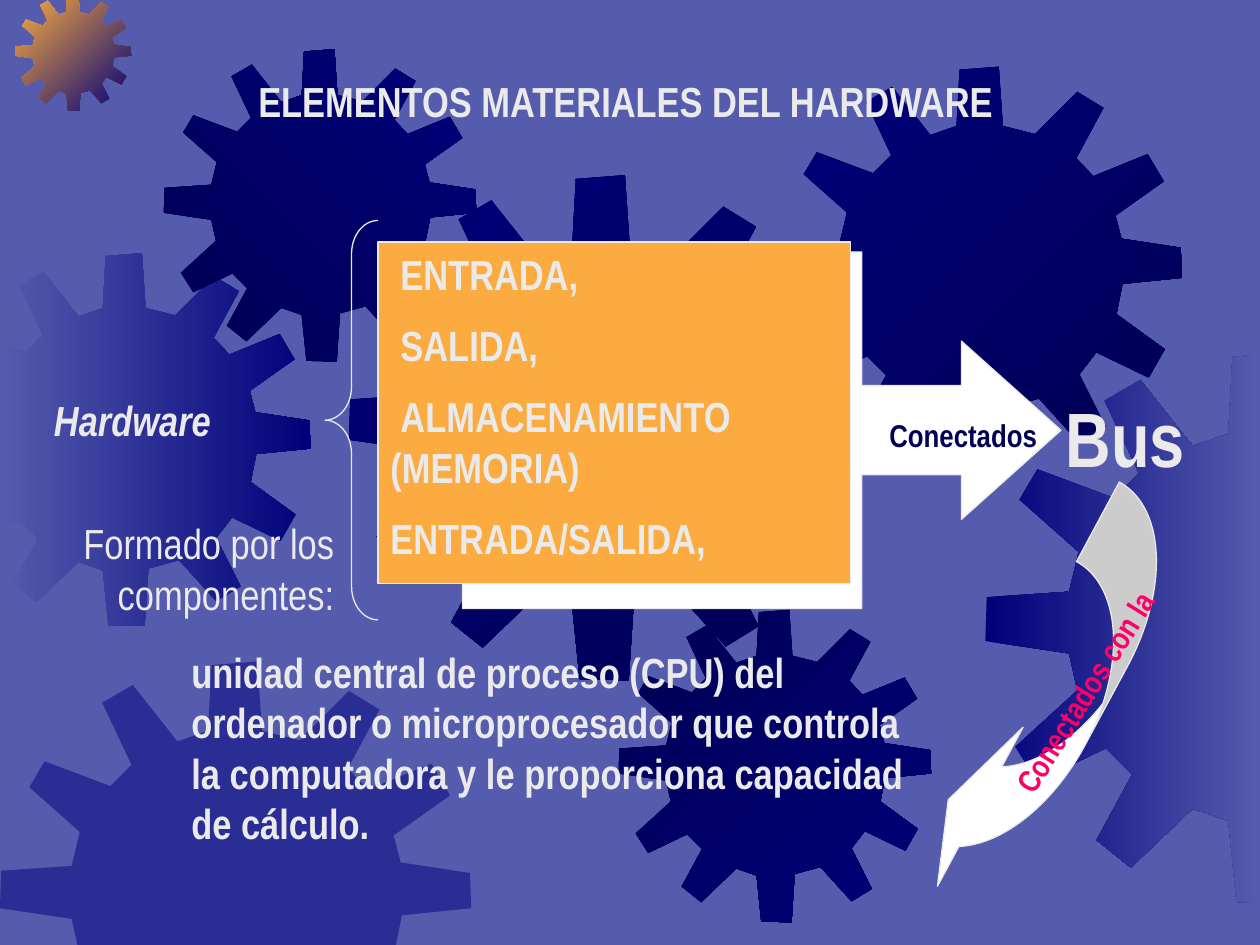
from lxml.etree import SubElement
from pptx import Presentation
from pptx.dml.color import RGBColor
from pptx.enum.shapes import MSO_SHAPE as SHAPE
from pptx.enum.text import MSO_ANCHOR, MSO_AUTO_SIZE, PP_ALIGN
from pptx.oxml.ns import qn
from pptx.util import Inches, Pt

W, H = 10, 7.5
FONT = "Arial Narrow"
PERIWINKLE, BLUE, NAVY = "555BAD", "00007A", "000054"
ORANGE, PALE, WHITE, PINK = "FCAB40", "EAEAEA", "FFFFFF", "FF0066"

# Outline of a twelve-tooth gear on a square grid of GEAR_GRID units
GEAR_GRID = 401
GEAR = [
    (255, 67), (223, 59), (219, 0), (180, 3), (177, 59), (151, 68), (113, 20), (87, 35),
    (112, 88), (94, 106), (38, 85), (25, 107), (68, 145), (61, 174), (1, 178), (0, 210),
    (61, 219), (67, 246), (22, 287), (38, 312), (88, 288), (107, 307), (81, 355), (106, 375),
    (151, 332), (177, 341), (183, 400), (222, 401), (226, 339), (259, 330), (299, 374), (325, 358),
    (299, 306), (316, 284), (368, 309), (384, 281), (336, 246), (342, 216), (401, 210), (400, 180),
    (341, 171), (335, 148), (383, 114), (367, 87), (313, 109), (296, 91), (323, 41), (297, 25),
]

# left, top, size, first colour, last colour, clockwise gradient angle
GEARS = [
    (-0.49, 2.01, 2.96, PERIWINKLE, BLUE, 0),
    (0.12, -0.04, 0.92, ORANGE, BLUE, 45),
    (1.3, 0.39, 2.48, NAVY, BLUE, 315),
    (2.77, 1.39, 4.01, BLUE, NAVY, 45),
    (0, 5.25, 3.74, BLUE, None, None),  # half transparent
    (4.91, 4.84, 2.48, NAVY, BLUE, 45),
    (6.18, 0.53, 3.2, BLUE, NAVY, 45),
    (7.82, 2.8, 4.37, BLUE, PERIWINKLE, 0),
]

# preset, box, adjustments, fill, rotation
DIAGRAM = {
    "brace": (SHAPE.LEFT_BRACE, (2.58, 1.75, 0.42, 3.17), (0.633, 0.5), None, 0),
    "callout": (SHAPE.RIGHT_ARROW_CALLOUT, (3.67, 2, 4.75, 2.83),
                (0.25, 0.25, 0.279, 0.667), WHITE, 0),
    "components": (SHAPE.RECTANGLE, (3, 1.92, 3.75, 2.71), (), ORANGE, 0),
    "bus arrow": (SHAPE.CURVED_LEFT_ARROW, (7.99, 3.79, 0.75, 3.58),
                  (0.956, 1.911, 0.333), WHITE, 28.3),
}

TITLE = ("ELEMENTOS MATERIALES DEL HARDWARE", (1.95, 0.55, 6.88, 0.5))
# text, first-line indent
COMPONENTS = [
    ("ENTRADA,", 0.08),
    ("SALIDA,", 0.08),
    ("ALMACENAMIENTO (MEMORIA)", 0.08),
    ("ENTRADA/SALIDA,", 0),
]
CPU = ("unidad central de proceso (CPU) del ordenador o microprocesador que controla "
       "la computadora y le proporciona capacidad de cálculo.")
# text, box, rotation, format
LABELS = [
    ("Hardware", (0.33, 3.08, 2.25, 0.5), 0, dict(italic=True)),
    ("Conectados", (6.33, 3.25, 2, 0.4), 0, dict(size=18, color=NAVY, right=True)),
    (CPU, (1.42, 5.08, 5.92, 1.72), 0, {}),
    ("Formado por los componentes:", (0, 4.06, 2.75, 1.3), 0, dict(bold=False, right=True)),
    ("Conectados con la", (7.13, 5.55, 2.63, 0.4), 302.1, dict(size=18, color=PINK, right=True)),
    ("Bus", (8.36, 3.05, 1.33, 0.84), 0, dict(size=44)),
]


def rgb(color):
    return RGBColor.from_string(color)


def inches(box):
    return [Inches(v) for v in box]


def clip(points, axis, limit, sign):
    """Keep the part of a polygon where sign * (coordinate - limit) is not negative."""
    kept = []
    for a, b in zip(points, points[1:] + points[:1]):
        da, db = (sign * (p[axis] - limit) for p in (a, b))
        if da >= 0:
            kept.append(a)
        if da * db < 0:
            t = da / (da - db)
            kept.append(tuple(u + t * (v - u) for u, v in zip(a, b)))
    return kept


def add_gear(s, left, top, size, first, last, angle):
    k = size / GEAR_GRID
    points = [(left + x * k, top + y * k) for x, y in GEAR]
    for axis, limit, sign in ((0, 0, 1), (0, W, -1), (1, 0, 1), (1, H, -1)):
        points = clip(points, axis, limit, sign)
    start, *rest = [inches(p) for p in points]
    builder = s.shapes.build_freeform(*start, scale=1.0)
    builder.add_line_segments(rest, close=True)
    sp = builder.convert_to_shape()
    sp.shadow.inherit = False
    sp.line.fill.background()
    if last:
        sp.fill.gradient()
        sp.fill.gradient_angle = -angle % 360
        for stop, color in zip(sp.fill.gradient_stops, (first, last)):
            stop.color.rgb = rgb(color)
    else:
        sp.fill.solid()
        sp.fill.fore_color.rgb = rgb(first)
        clr = sp.element.spPr.find(".//" + qn("a:srgbClr"))
        SubElement(clr, qn("a:alpha"), val="50000")


def add_preset(s, preset, box, adjustments, fill, rotation):
    sp = s.shapes.add_shape(preset, *inches(box))
    sp.shadow.inherit = False
    sp.rotation = rotation
    for i, value in enumerate(adjustments):
        sp.adjustments[i] = value
    if fill:
        sp.fill.solid()
        sp.fill.fore_color.rgb = rgb(fill)
    else:
        sp.fill.background()
    sp.line.color.rgb = rgb(PALE)
    sp.line.width = Pt(0.75)
    return sp


def write(sp, paragraphs, size=24, color=PALE, bold=True, italic=False, right=False):
    tf = sp.text_frame
    tf.word_wrap = True
    tf.auto_size = MSO_AUTO_SIZE.NONE
    tf.vertical_anchor = MSO_ANCHOR.TOP
    for i, (text, indent) in enumerate(paragraphs):
        p = tf.add_paragraph() if i else tf.paragraphs[0]
        p.alignment = PP_ALIGN.RIGHT if right else PP_ALIGN.LEFT
        p.space_before = Pt(size / 2 if i else 0)
        if indent:
            p._p.get_or_add_pPr().set("indent", str(Inches(indent)))
        r = p.add_run()
        r.text = text
        font = r.font
        font.name, font.size, font.bold, font.italic = FONT, Pt(size), bold, italic
        font.color.rgb = rgb(color)


def main():
    prs = Presentation()
    prs.slide_width, prs.slide_height = Inches(W), Inches(H)
    s = prs.slides.add_slide(prs.slide_layouts[5])
    s.background.fill.solid()
    s.background.fill.fore_color.rgb = rgb(PERIWINKLE)

    for gear in GEARS:
        add_gear(s, *gear)
    shapes = {name: add_preset(s, *spec_row) for name, spec_row in DIAGRAM.items()}
    write(shapes["components"], COMPONENTS)

    for text, box, rotation, style in LABELS:
        tb = s.shapes.add_textbox(*inches(box))
        tb.rotation = rotation
        write(tb, [(text, 0)], **style)

    text, box = TITLE
    title = s.shapes.title
    title.left, title.top, title.width, title.height = inches(box)
    write(title, [(text, 0)])
    s.shapes.element.append(title.element)  # in front of the gears
    prs.save("out.pptx")


if __name__ == "__main__":
    main()
